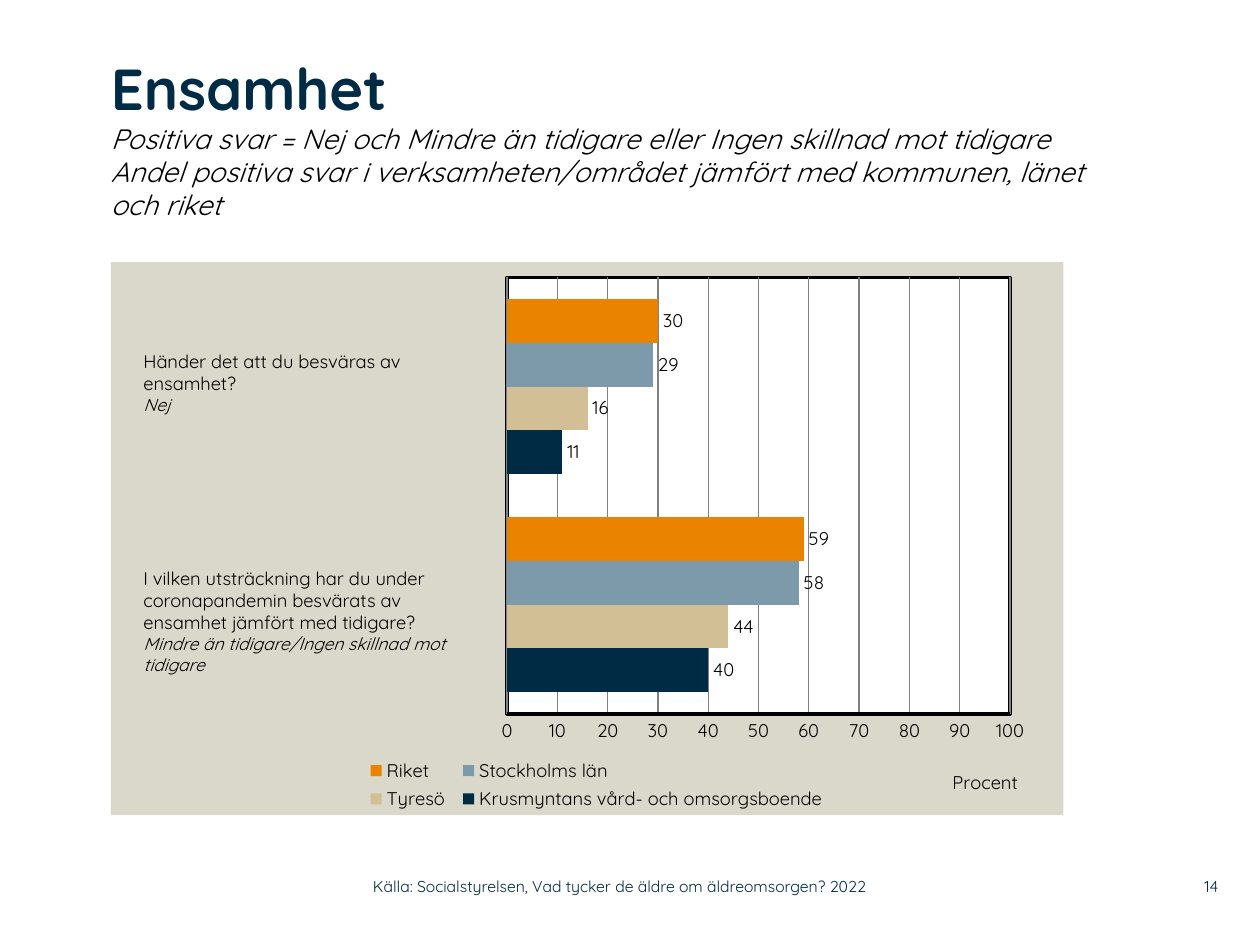
from typing import NamedTuple

from lxml.etree import SubElement
from pptx import Presentation
from pptx.chart.data import CategoryChartData as Data
from pptx.dml.color import RGBColor
from pptx.enum.chart import XL_CHART_TYPE as Kind
from pptx.enum.chart import XL_LABEL_POSITION as Spot
from pptx.enum.chart import XL_LEGEND_POSITION as Side
from pptx.enum.chart import XL_TICK_MARK as Tick
from pptx.enum.text import MSO_ANCHOR as Anchor
from pptx.enum.text import PP_ALIGN as Align
from pptx.oxml import parse_xml
from pptx.oxml.ns import nsdecls, qn
from pptx.util import Inches, Pt

FONT = "Quicksand"
NAVY = RGBColor(0x00, 0x2B, 0x45)
BLACK = RGBColor(0x00, 0x00, 0x00)
WHITE = RGBColor(0xFF, 0xFF, 0xFF)
GRAY = RGBColor(0x80, 0x80, 0x80)
STONE = RGBColor(0xDA, 0xD7, 0xCB)
SAND = RGBColor(0xD3, 0xBF, 0x96)
STEEL = RGBColor(0x7D, 0x9A, 0xAA)
AMBER = RGBColor(0xE9, 0x83, 0x00)


class Line(NamedTuple):
    text: str
    size: float
    color: RGBColor = BLACK
    bold: bool = False
    slant: bool = False


class Box(NamedTuple):
    left: float
    top: float
    width: float
    height: float
    lines: list[Line]
    inset: bool = False
    anchor: Anchor = Anchor.TOP
    align: Align = Align.LEFT
    space: float = 1.0


class Series(NamedTuple):
    name: str
    vals: tuple[int, int]
    color: RGBColor


BOXES = [
    Box(0.88, 0.45, 7.81, 1.64, [
        Line("Ensamhet", 33, NAVY, bold=True),
        Line("Positiva svar = Nej och Mindre än tidigare eller Ingen skillnad "
             "mot tidigare", 16, slant=True),
        Line("Andel positiva svar i verksamheten/området jämfört med kommunen, "
             "länet och riket", 16, slant=True),
    ], space=0.97),
    Box(1.04, 4.45, 2.94, 0.97, [
        Line("I vilken utsträckning har du under coronapandemin besvärats av "
             "ensamhet jämfört med tidigare?", 10.5),
        Line("Mindre än tidigare/Ingen skillnad mot tidigare", 10, slant=True),
    ], inset=True),
    Box(1.04, 2.73, 2.94, 0.63, [
        Line("Händer det att du besväras av", 10.5),
        Line("ensamhet?", 10.5),
        Line("Nej", 10, slant=True),
    ], inset=True),
    Box(2.96, 6.89, 4.43, 0.29, [
        Line("Källa: Socialstyrelsen, Vad tycker de äldre om äldreomsorgen? 2022",
             9, NAVY),
    ], anchor=Anchor.MIDDLE),
    Box(9.2, 6.89, 0.47, 0.29, [Line("14", 9, NAVY)],
        anchor=Anchor.MIDDLE, align=Align.RIGHT),
]

SERIES = [
    Series("Krusmyntans vård- och omsorgsboende", (40, 11), NAVY),
    Series("Tyresö", (44, 16), SAND),
    Series("Stockholms län", (58, 29), STEEL),
    Series("Riket", (59, 30), AMBER),
]


def style(font, size: float, color: RGBColor = BLACK) -> None:
    font.name = FONT
    font.size = Pt(size)
    font.color.rgb = color


def add_box(slide, box: Box) -> None:
    shape = slide.shapes.add_textbox(
        Inches(box.left), Inches(box.top), Inches(box.width), Inches(box.height))
    frame = shape.text_frame
    frame.word_wrap = True
    frame.vertical_anchor = box.anchor
    if not box.inset:
        frame.margin_left = frame.margin_right = 0
        frame.margin_top = frame.margin_bottom = 0
    frame.text = "\n".join(line.text for line in box.lines)
    for para, line in zip(frame.paragraphs, box.lines):
        para.alignment = box.align
        para.line_spacing = box.space
        font = para.runs[0].font
        style(font, line.size, line.color)
        font.bold = line.bold
        font.italic = line.slant


def layout(inner: bool = False, **sizes: float):
    """Build a manual chart layout from fractions of the chart area."""
    root = parse_xml(f"<c:layout {nsdecls('c')}><c:manualLayout/></c:layout>")
    part = root[0]
    if inner:
        SubElement(part, qn("c:layoutTarget")).set("val", "inner")
    for key in ("xMode", "yMode"):
        SubElement(part, qn(f"c:{key}")).set("val", "edge")
    for key, size in sizes.items():
        SubElement(part, qn(f"c:{key}")).set("val", str(size))
    return root


def place(node, after: str, item) -> None:
    """Put a layout behind the named child, or first, in place of any other."""
    for old in node.findall(qn("c:layout")):
        node.remove(old)
    prior = node.find(qn(after)) if after else None
    node.insert(0 if prior is None else node.index(prior) + 1, item)


def paint(node, fill: RGBColor, line: RGBColor | None = None) -> None:
    """Fill a chart area that has no public format object."""
    edge = (f'<a:ln w="{Pt(2)}"><a:solidFill><a:srgbClr val="{line}"/>'
            "</a:solidFill></a:ln>" if line is not None
            else "<a:ln><a:noFill/></a:ln>")
    props = parse_xml(
        f"<c:spPr {nsdecls('c', 'a')}><a:solidFill>"
        f'<a:srgbClr val="{fill}"/></a:solidFill>{edge}</c:spPr>')
    text = node.find(qn("c:txPr"))
    if text is None:
        node.append(props)
    else:
        text.addprevious(props)


def add_bars(slide) -> None:
    data = Data()
    data.categories = ["1", "2"]
    for item in SERIES:
        data.add_series(item.name, item.vals)
    chart = slide.shapes.add_chart(
        Kind.BAR_CLUSTERED, Inches(0.88), Inches(2.08),
        Inches(7.56), Inches(4.39), data).chart
    style(chart.font, 10.5)
    chart.has_title = False

    plot = chart.plots[0]
    plot.gap_width = 100
    plot.overlap = 0
    plot.vary_by_categories = False
    for bar, item in zip(plot.series, SERIES):
        bar.format.fill.solid()
        bar.format.fill.fore_color.rgb = item.color
        tags = bar.data_labels
        tags.show_value = True
        tags.position = Spot.OUTSIDE_END
        style(tags.font, 10.5)

    chart.category_axis.visible = False
    axis = chart.value_axis
    axis.minimum_scale, axis.maximum_scale, axis.major_unit = 0, 100, 10
    axis.major_tick_mark = axis.minor_tick_mark = Tick.NONE
    axis.format.line.color.rgb = BLACK
    axis.format.line.width = Pt(2)
    axis.major_gridlines.format.line.color.rgb = GRAY
    axis.major_gridlines.format.line.width = Pt(0.75)
    style(axis.tick_labels.font, 10.5)
    title = axis.axis_title
    title.text_frame.text = "Procent"
    font = title.text_frame.paragraphs[0].runs[0].font
    style(font, 10.5)
    font.bold = False

    chart.has_legend = True
    legend = chart.legend
    legend.position = Side.BOTTOM
    legend.include_in_layout = False
    style(legend.font, 10.5)

    root = chart.element
    area = root.find(".//" + qn("c:plotArea"))
    place(area, "", layout(True, x=0.416, y=0.028, w=0.528, h=0.789))
    place(root.find(".//" + qn("c:legend")), "c:legendPos",
          layout(x=0.26, y=0.89, w=0.5, h=0.11))
    place(area.find(".//" + qn("c:title")), "c:tx", layout(x=0.88, y=0.91))
    paint(area, WHITE, BLACK)
    paint(root, STONE)


def main() -> None:
    deck = Presentation()
    deck.slide_width, deck.slide_height = Inches(10), Inches(7.5)
    slide = deck.slides.add_slide(deck.slide_layouts[6])
    add_bars(slide)
    for box in BOXES:
        add_box(slide, box)
    deck.save("out.pptx")


if __name__ == "__main__":
    main()
